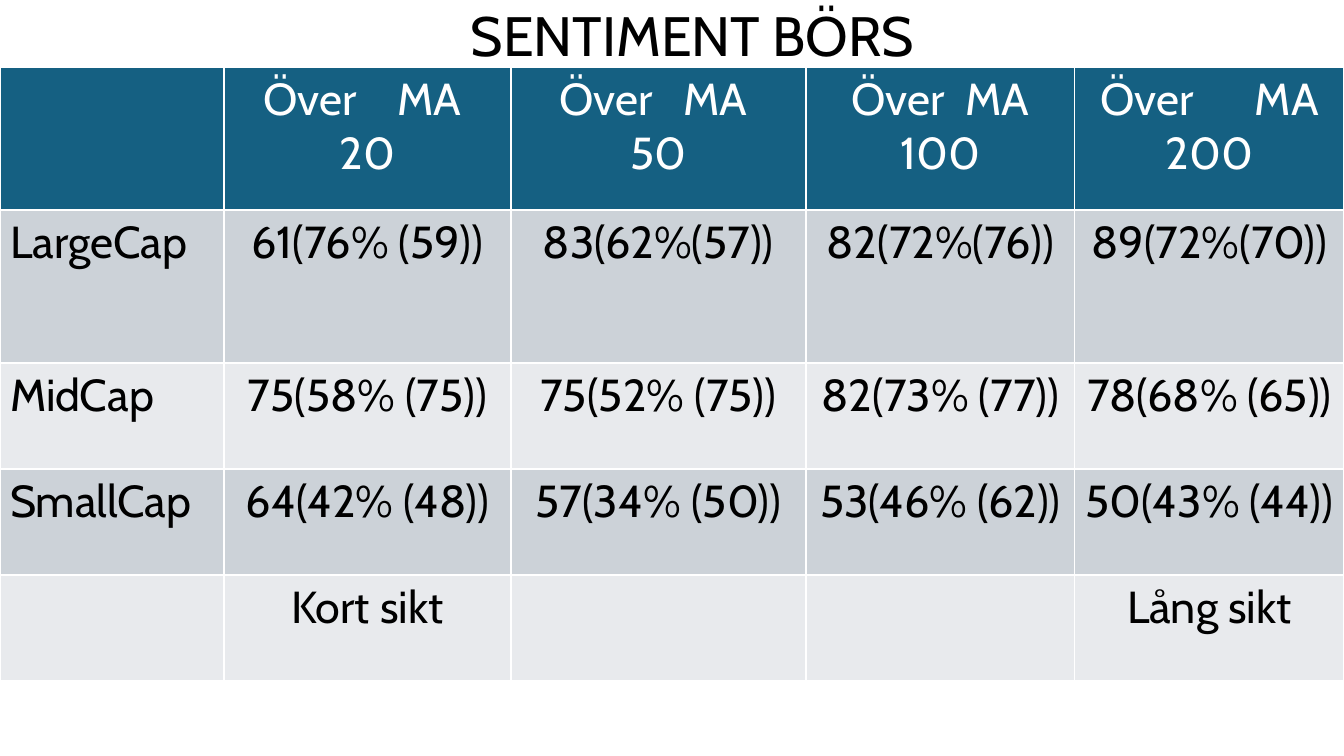
"""Build the stock market sentiment slide with its moving average table."""
from pptx import Presentation, util as u
from pptx.dml.color import RGBColor
from pptx.enum import text

PX = 914400 / 100.8
FONT = "Cabin"
BLACK = RGBColor(0x00, 0x00, 0x00)
WHITE = RGBColor(0xFF, 0xFF, 0xFF)
HEADER_BLUE = RGBColor(0x15, 0x60, 0x82)
BAND_DARK = RGBColor(0xCC, 0xD2, 0xD8)
BAND_LIGHT = RGBColor(0xE8, 0xEA, 0xED)
SPACE_WIDTH = 7.3

COLUMN_WIDTHS = [224, 287, 295, 269, 269]
ROW_HEIGHTS = [143, 153, 106, 106, 106]
HEADERS = [(4, ["MA ", "20"]), (3, ["MA ", "50"]), (2, ["MA 100"]), (6, ["MA 200"])]
BODY = [
    ["LargeCap", "61(76% (59))", "83(62%(57))", "82(72%(76))", "89(72%(70))"],
    ["MidCap", "75(58% (75))", "75(52% (75))", "82(73% (77))", "78(68% (65))"],
    ["SmallCap", "64(42% (48))", "57(34% (50))", "53(46% (62))", "50(43% (44))"],
    ["", "Kort sikt", "", "", "Lång sikt"],
]


def px(length):
    return u.Emu(round(length * PX))


def add_run(paragraph, words, size, color):
    run = paragraph.add_run()
    run.text = words
    run.font.name = FONT
    run.font.size = u.Pt(size)
    run.font.bold = False
    run.font.color.rgb = color
    return run


presentation = Presentation()
presentation.slide_width = px(1344)
presentation.slide_height = px(756)
slide = presentation.slides.add_slide(presentation.slide_layouts[6])

title = slide.shapes.add_textbox(px(113), px(0), px(1159), px(77))
title.text_frame.word_wrap = True
title.text_frame.vertical_anchor = text.MSO_ANCHOR.MIDDLE
paragraph = title.text_frame.paragraphs[0]
paragraph.alignment = text.PP_ALIGN.CENTER
paragraph.line_spacing = 0.9
add_run(paragraph, "SENTIMENT BÖRS", 39.6, BLACK)

table = slide.shapes.add_table(
    len(ROW_HEIGHTS), len(COLUMN_WIDTHS), px(0), px(67), px(sum(COLUMN_WIDTHS)), px(sum(ROW_HEIGHTS))
).table
for column, width in zip(table.columns, COLUMN_WIDTHS):
    column.width = px(width)
for row, height in zip(table.rows, ROW_HEIGHTS):
    row.height = px(height)

for column_index in range(len(COLUMN_WIDTHS)):
    cell = table.cell(0, column_index)
    cell.fill.solid()
    cell.fill.fore_color.rgb = HEADER_BLUE

for column_index, (gap, lines) in enumerate(HEADERS, start=1):
    frame = table.cell(0, column_index).text_frame
    paragraph = frame.paragraphs[0]
    add_run(paragraph, "Över", 32, WHITE)
    space = add_run(paragraph, " ", 32, WHITE)
    space.font._element.set("spc", str(round((gap - 1) * SPACE_WIDTH * 100)))
    add_run(paragraph, lines[0], 32, WHITE)
    for line in lines[1:]:
        add_run(frame.add_paragraph(), line, 32, WHITE)
    for paragraph in frame.paragraphs:
        paragraph.alignment = text.PP_ALIGN.CENTER

for row_index, values in enumerate(BODY, start=1):
    for column_index, value in enumerate(values):
        cell = table.cell(row_index, column_index)
        cell.fill.solid()
        cell.fill.fore_color.rgb = BAND_DARK if row_index % 2 else BAND_LIGHT
        if value:
            paragraph = cell.text_frame.paragraphs[0]
            paragraph.alignment = text.PP_ALIGN.CENTER if column_index else text.PP_ALIGN.LEFT
            add_run(paragraph, value, 32, BLACK)

presentation.save("out.pptx")
